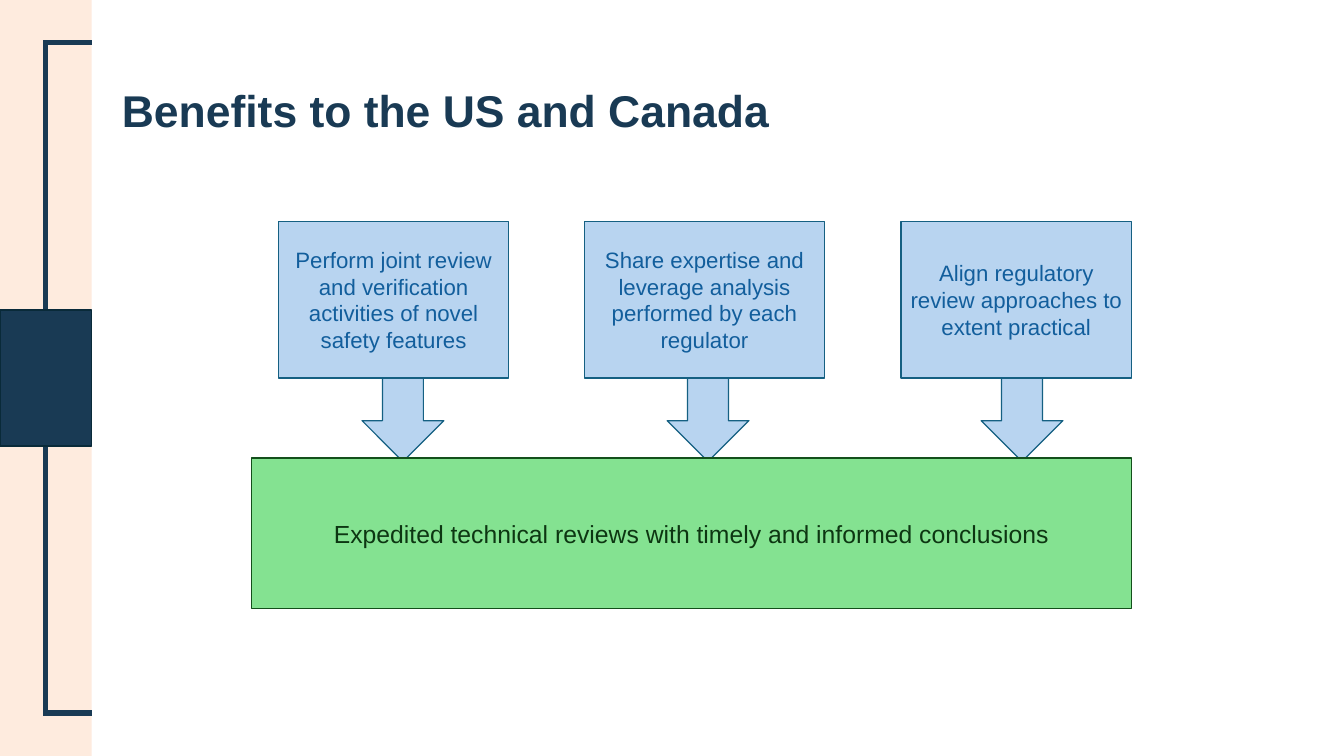
from pptx import Presentation
from pptx.dml.color import RGBColor
from pptx.enum.shapes import MSO_CONNECTOR, MSO_SHAPE
from pptx.enum.text import MSO_ANCHOR, PP_ALIGN
from pptx.oxml.ns import qn
from pptx.util import Inches, Pt
from lxml import etree

RECT = MSO_SHAPE.RECTANGLE
ARROW = MSO_SHAPE.DOWN_ARROW
STRAIGHT = MSO_CONNECTOR.STRAIGHT
MIDDLE = MSO_ANCHOR.MIDDLE
CENTER = PP_ALIGN.CENTER
LEFT = PP_ALIGN.LEFT

NAVY = RGBColor(0x19, 0x3A, 0x54)
DARK = RGBColor(0x09, 0x2A, 0x39)
PEACH = RGBColor(0xFE, 0xEB, 0xDE)
SKY = RGBColor(0xB8, 0xD4, 0xF0)
TEAL = RGBColor(0x15, 0x60, 0x82)
BLUE = RGBColor(0x12, 0x5E, 0x9C)
MINT = RGBColor(0x84, 0xE2, 0x91)
GREEN = RGBColor(0x13, 0x50, 0x1B)
FOREST = RGBColor(0x0D, 0x36, 0x12)

# Left edge, width, arrow centre and text of each action
ACTIONS = [
    (3.13, 2.59, 4.53, "Perform joint review and verification activities "
                       "of novel safety features"),
    (6.57, 2.7, 7.96, "Share expertise and leverage analysis performed "
                      "by each regulator"),
    (10.13, 2.59, 11.49, "Align regulatory review approaches to extent "
                         "practical"),
]


def add_shape(slide, kind, x, y, w, h, fill, edge=None, width=1):
    shape = slide.shapes.add_shape(
        kind, Inches(x), Inches(y), Inches(w), Inches(h))
    shape.shadow.inherit = False
    shape.fill.solid()
    shape.fill.fore_color.rgb = fill
    if edge is None:
        shape.line.fill.background()
    else:
        shape.line.color.rgb = edge
        shape.line.width = Pt(width)
    return shape


def add_line(slide, x1, y1, x2, y2):
    line = slide.shapes.add_connector(
        STRAIGHT, Inches(x1), Inches(y1), Inches(x2), Inches(y2))
    line.line.color.rgb = NAVY
    line.line.width = Pt(4.5)
    etree.SubElement(line._element.spPr, qn("a:effectLst"))


def set_text(shape, text, size, color, align=CENTER, bold=False):
    frame = shape.text_frame
    frame.text = text
    frame.word_wrap = True
    frame.vertical_anchor = MIDDLE
    para = frame.paragraphs[0]
    para.alignment = align
    font = para.runs[0].font
    font.name = "Arial"
    font.size = Pt(size)
    font.bold = bold
    font.color.rgb = color
    return para


def add_side(slide):
    add_shape(slide, RECT, 0, 0, 1.03, 8.5, PEACH)
    add_line(slide, 0.51, 0.45, 0.51, 8.05)
    for y in (0.48, 8.02):
        add_line(slide, 0.5, y, 1.04, y)
    add_shape(slide, RECT, 0, 3.49, 1.03, 1.53, NAVY, DARK, 1.5)


def add_title(slide, text):
    title = slide.shapes.title
    title.left, title.top = Inches(1.27), Inches(0.45)
    title.width, title.height = Inches(12.81), Inches(1.64)
    para = set_text(title, text, 36, NAVY, LEFT, True)
    para.line_spacing = 0.9


def main():
    deck = Presentation()
    deck.slide_width, deck.slide_height = Inches(15.11), Inches(8.5)
    slide = deck.slides.add_slide(deck.slide_layouts[5])

    # Side band and title
    add_side(slide)
    add_title(slide, "Benefits to the US and Canada")

    # Arrows lie behind the boxes they link
    for _, _, mid, _ in ACTIONS:
        add_shape(slide, ARROW, mid - 0.46, 4.05, 0.92, 1.14, SKY, TEAL)

    # Actions
    for x, w, _, text in ACTIONS:
        box = add_shape(slide, RECT, x, 2.49, w, 1.76, SKY, TEAL)
        set_text(box, text, 18, BLUE)

    # Outcome
    box = add_shape(slide, RECT, 2.83, 5.15, 9.89, 1.69, MINT, GREEN)
    set_text(box, "Expedited technical reviews with timely and informed "
                  "conclusions", 20, FOREST)

    deck.save("out.pptx")


if __name__ == "__main__":
    main()
